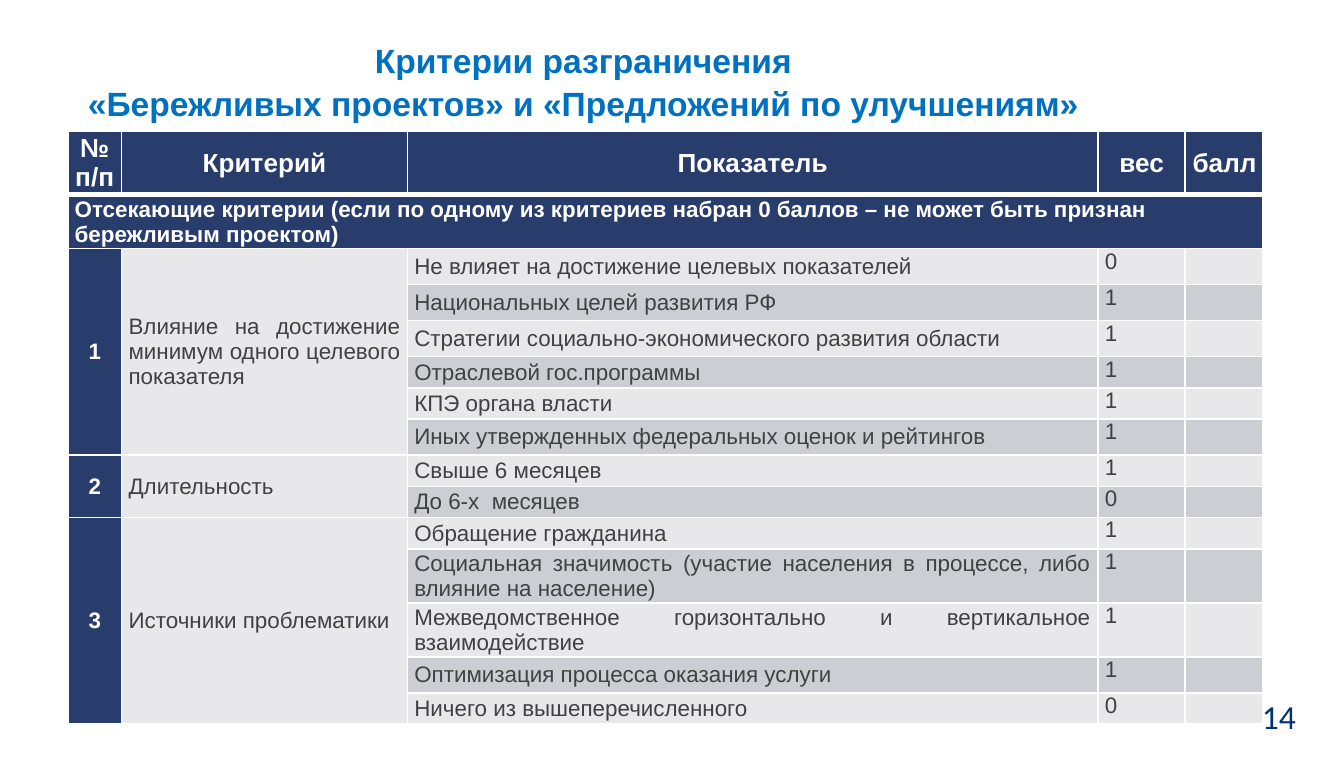
from lxml.etree import SubElement
from pptx import Presentation
from pptx.dml.color import RGBColor
from pptx.enum.text import MSO_ANCHOR as Anchor, MSO_AUTO_SIZE as Fit, PP_ALIGN as Align
from pptx.oxml.ns import qn
from pptx.util import Cm, Pt

NAVY, LIGHT, DARK = "293D6D", "E8E8EB", "CDCED4"
WHITE, GREY, BLUE, INK = "FFFFFF", "414042", "0070C0", "003274"

COLS = [1.02, 5.4, 13.05, 1.65, 1.47]
HEADS = ["№ п/п", "Критерий", "Показатель", "вес", " балл"]
RULE = ("Отсекающие критерии (если по одному из критериев набран 0 баллов – "
        "не может быть признан бережливым проектом)")
HIGH, LOW, TALL = 0.68, 0.59, 1.02
# Criterion, then its indicators: text, weight, row height
GROUPS = [
    ("Влияние на достижение минимум одного целевого показателя", [
        ("Не влияет на достижение целевых показателей", 0, HIGH),
        ("Национальных целей развития РФ ", 1, HIGH),
        ("Стратегии социально-экономического развития области", 1, HIGH),
        ("Отраслевой гос.программы", 1, LOW),
        ("КПЭ органа власти", 1, LOW),
        ("Иных утвержденных федеральных оценок и рейтингов", 1, HIGH)]),
    ("Длительность", [
        ("Свыше 6 месяцев", 1, LOW),
        ("До 6-х  месяцев", 0, LOW)]),
    ("Источники проблематики", [
        ("Обращение гражданина", 1, LOW),
        ("Социальная значимость (участие населения в процессе, "
         "либо влияние на население)", 1, TALL),
        ("Межведомственное горизонтально и вертикальное взаимодействие", 1, TALL),
        ("Оптимизация процесса оказания услуги", 1, HIGH),
        ("Ничего из вышеперечисленного", 0, LOW)]),
]


def paint(color):
    return RGBColor.from_string(color)


def style(para, size, color, bold=False, face="Arial"):
    for run in para.runs:
        font = run.font
        font.name, font.size, font.bold = face, Pt(size), bold
        font.color.rgb = paint(color)


def edge(cell, **widths):
    """Draw white borders; a width in points may be given for each side."""
    props = cell._tc.get_or_add_tcPr()
    for side in "LRTB":
        line = SubElement(props, qn("a:ln" + side), w=str(Pt(widths.get(side, 1))))
        fill = SubElement(line, qn("a:solidFill"))
        SubElement(fill, qn("a:srgbClr"), val=WHITE)


def put(cell, text, fill, color=GREY, size=12, bold=False, align=Align.JUSTIFY,
        anchor=Anchor.MIDDLE, inset=0.13, **widths):
    edge(cell, **widths)
    cell.fill.solid()
    cell.fill.fore_color.rgb = paint(fill)
    cell.margin_left = cell.margin_right = Cm(inset)
    cell.margin_top = cell.margin_bottom = 0
    cell.vertical_anchor = anchor
    para = cell.text_frame.paragraphs[0]
    para.text, para.alignment = text, align
    style(para, size, color, bold)
    if not text:
        SubElement(para._p, qn("a:endParaRPr"), sz=str(size * 100))


def add_title(slide, box):
    title = slide.shapes.title
    title.left, title.top, title.width, title.height = map(Cm, box)
    frame = title.text_frame
    frame.text = ("Критерии разграничения \n"
                  "«Бережливых проектов» и «Предложений по улучшениям» ")
    frame.auto_size, frame.word_wrap = Fit.NONE, True
    frame.vertical_anchor = Anchor.MIDDLE
    for para in frame.paragraphs:
        para.alignment, para.line_spacing = Align.CENTER, 1.07
        style(para, 18, BLUE, True)


def add_grid(slide, box):
    rows = [row for _, items in GROUPS for row in items]
    highs = [1.2, 1.0] + [high for _, _, high in rows]
    table = slide.shapes.add_table(len(highs), len(COLS), *map(Cm, box)).table
    table.first_row = table.horz_banding = False
    for col, width in zip(table.columns, COLS):
        col.width = Cm(width)
    for row, high in zip(table.rows, highs):
        row.height = Cm(high)

    last = len(COLS) - 1
    for c, head in enumerate(HEADS):
        put(table.cell(0, c), head, NAVY, WHITE, 14, True,
            Align.LEFT if c == last else Align.CENTER,
            inset=0 if c == last else 0.13, B=3)
        put(table.cell(1, c), "" if c else RULE, NAVY, WHITE, 12, True,
            Align.LEFT, T=3)
    table.cell(1, 0).merge(table.cell(1, last))

    top = 2
    for num, (name, items) in enumerate(GROUPS, 1):
        for r, (text, weight, _) in enumerate(items, top):
            band = DARK if r % 2 else LIGHT
            first = r == top
            put(table.cell(r, 0), str(num) if first else "", NAVY, WHITE,
                bold=True, align=Align.CENTER)
            put(table.cell(r, 1), name if first else "", LIGHT)
            put(table.cell(r, 2), text, band)
            put(table.cell(r, 3), str(weight), band, anchor=Anchor.TOP)
            put(table.cell(r, 4), "", band)
        end = top + len(items)
        for c in range(2):
            table.cell(top, c).merge(table.cell(end - 1, c))
        top = end


def add_number(slide, box):
    frame = slide.shapes.add_textbox(*map(Cm, box)).text_frame
    frame.text, frame.word_wrap = "14", True
    frame.vertical_anchor = Anchor.MIDDLE
    style(frame.paragraphs[0], 18, INK, face="Calibri")


def main():
    deck = Presentation()
    deck.slide_width, deck.slide_height = Cm(25.4), Cm(14.3)
    slide = deck.slides.add_slide(deck.slide_layouts[5])
    add_number(slide, (23.6, 13, 1.75, 1.04))
    add_title(slide, (0.84, 0.57, 20.55, 1.9))
    add_grid(slide, (1.28, 2.48, sum(COLS), 11.2))
    deck.save("out.pptx")


if __name__ == "__main__":
    main()
